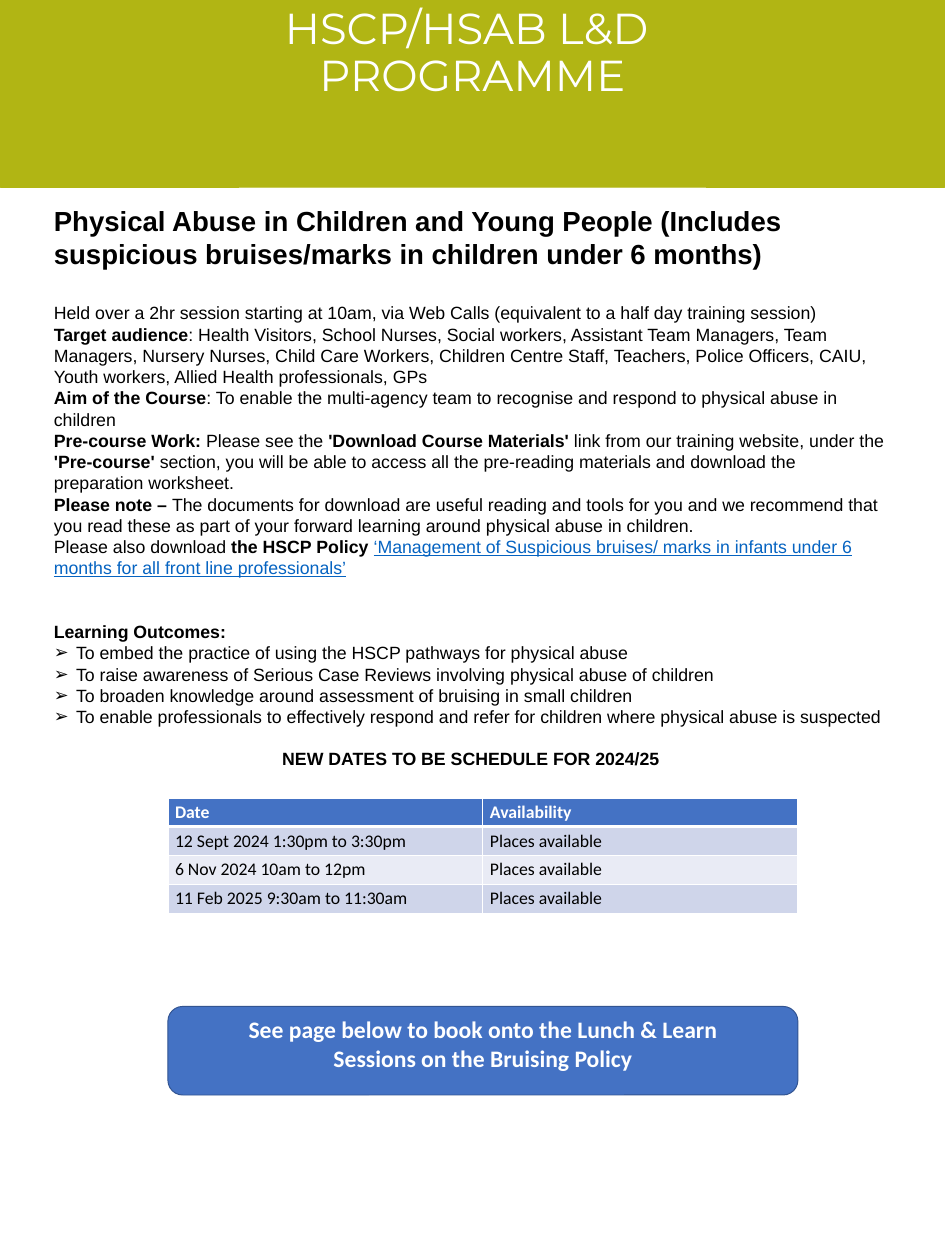
import pptx
import pptx.dml.color
import pptx.enum.shapes
import pptx.enum.text
import pptx.oxml
import pptx.oxml.ns
import pptx.util

Pt = pptx.util.Pt
ALIGN = pptx.enum.text.PP_ALIGN
ANCHOR = pptx.enum.text.MSO_ANCHOR
SHAPES = pptx.enum.shapes.MSO_SHAPE

PAGE_WIDTH, PAGE_HEIGHT = 960, 1280
PANEL_LEFT, PANEL_WIDTH = 170.6, 640
ROW_HEIGHT = 29.2
WHITE, BLACK, GREEN, BLUE, LINK = "FFFFFF", "000000", "B1B514", "4472C4", "0563C1"

HEADING = ("Physical Abuse in Children and Young People (Includes suspicious "
           "bruises/marks in children under 6 months)")
DETAILS = [
    [("Held over a 2hr session starting at 10am, via Web Calls (equivalent to a half day "
      "training session)", {})],
    [("Target audience", {"bold": True}),
     (": Health Visitors, School Nurses, Social workers, Assistant Team Managers, Team Managers, "
      "Nursery Nurses, Child Care Workers, Children Centre Staff, Teachers, Police Officers, CAIU, "
      "Youth workers, Allied Health professionals, GPs", {})],
    [("Aim of the Course", {"bold": True}),
     (": To enable the multi-agency team to recognise and respond to physical abuse in children", {})],
    [("Pre-course Work: ", {"bold": True}),
     ("Please see the ", {}),
     ("'Download Course Materials'", {"bold": True}),
     (" link from our training website, under the ", {}),
     ("'Pre-course'", {"bold": True}),
     (" section, you will be able to access all the pre-reading materials and download the "
      "preparation worksheet.", {})],
    [("Please note – ", {"bold": True}),
     ("The documents for download are useful reading and tools for you and we recommend that you "
      "read these as part of your forward learning around physical abuse in children.", {})],
    [("Please also download ", {}),
     ("the HSCP Policy ", {"bold": True}),
     ("‘Management of Suspicious bruises/ marks in infants under 6 months for all front line "
      "professionals’", {"color": LINK, "underline": True})],
]
OUTCOMES = [
    "To embed the practice of using the HSCP pathways for physical abuse",
    "To raise awareness of Serious Case Reviews involving physical abuse of children",
    "To broaden knowledge around assessment of bruising in small children",
    "To enable professionals to effectively respond and refer for children where physical abuse is suspected",
]
SESSIONS = [
    ("Date", "Availability"),
    ("12 Sept 2024 1:30pm to 3:30pm", "Places available"),
    ("6 Nov 2024 10am to 12pm", "Places available"),
    ("11 Feb 2025 9:30am to 11:30am", "Places available"),
]


def rgb(color):
    return pptx.dml.color.RGBColor.from_string(color)


def add_text(paragraph, text, size=18, font="Arial", color=BLACK, bold=False, underline=False):
    run = paragraph.add_run()
    run.text = text
    run.font.size = Pt(size)
    run.font.name = font
    run.font.color.rgb = rgb(color)
    run.font.bold = bold
    run.font.underline = underline


def next_paragraph(frame, align=ALIGN.LEFT, before=0, bullet=None):
    first = frame.paragraphs[0]
    paragraph = frame.add_paragraph() if first.runs else first
    paragraph.alignment = align
    paragraph.line_spacing = 1.0
    paragraph.space_before = Pt(before)
    paragraph.space_after = Pt(0)
    properties = paragraph._p.get_or_add_pPr()
    indent = Pt(22.5) if bullet else 0
    properties.set("marL", str(indent))
    properties.set("indent", str(-indent))
    mark = f'buChar char="{bullet}"' if bullet else "buNone"
    properties.append(pptx.oxml.parse_xml(f'<a:{mark} {pptx.oxml.ns.nsdecls("a")}/>'))
    return paragraph


def place(shape, left, top, width, height):
    shape.left, shape.top = Pt(left), Pt(top)
    shape.width, shape.height = Pt(width), Pt(height)


def add_panel(slide, kind, left, top, width, height, fill, line):
    shape = slide.shapes.add_shape(kind, Pt(left), Pt(top), Pt(width), Pt(height))
    shape.shadow.inherit = False
    shape.fill.solid()
    shape.fill.fore_color.rgb = rgb(fill)
    shape.line.color.rgb = rgb(line)
    shape.line.width = Pt(1)
    return shape


def add_banner(slide):
    band = add_panel(slide, SHAPES.RECTANGLE, 0, 0, PAGE_WIDTH, 190, GREEN, GREEN)
    slide.shapes._spTree.insert(2, band._element)
    title = slide.shapes.title
    place(title, 0, 3.6, PAGE_WIDTH, 162.7)
    frame = title.text_frame
    frame.auto_size = pptx.enum.text.MSO_AUTO_SIZE.NONE
    frame.vertical_anchor = ANCHOR.TOP
    paragraph = frame.paragraphs[0]
    paragraph.alignment = ALIGN.CENTER
    paragraph.line_spacing = 0.9
    add_text(paragraph, "HSCP/HSAB L&D ", size=44, font="Montserrat", color=WHITE)
    paragraph.add_line_break()
    add_text(paragraph, "PROGRAMME", size=44, font="Montserrat", color=WHITE)


def fill_body(body):
    place(body, 47.5, 203.8, 861.8, 605.5)
    frame = body.text_frame
    frame.word_wrap = True
    frame.auto_size = pptx.enum.text.MSO_AUTO_SIZE.NONE
    add_text(next_paragraph(frame), HEADING, size=28, bold=True)
    for index, runs in enumerate(DETAILS):
        paragraph = next_paragraph(frame, before=0 if index else 32.2)
        for text, style in runs:
            add_text(paragraph, text, **style)
    add_text(next_paragraph(frame, before=43), "Learning Outcomes:", bold=True)
    for outcome in OUTCOMES:
        add_text(next_paragraph(frame, bullet="➢"), outcome)
    dates = next_paragraph(frame, align=ALIGN.CENTER, before=21.5)
    add_text(dates, "NEW DATES TO BE SCHEDULE FOR 2024/25", bold=True)


def set_borders(cell, widths):
    properties = cell._tc.get_or_add_tcPr()
    for side, width in zip("LRTB", widths):
        properties.append(pptx.oxml.parse_xml(
            f'<a:ln{side} {pptx.oxml.ns.nsdecls("a")} w="{Pt(width)}"><a:solidFill>'
            f'<a:srgbClr val="{WHITE}"/></a:solidFill></a:ln{side}>'))


def add_sessions(slide):
    rows, columns = len(SESSIONS), len(SESSIONS[0])
    table = slide.shapes.add_table(rows, columns, Pt(PANEL_LEFT), Pt(810.7),
                                   Pt(PANEL_WIDTH), Pt(ROW_HEIGHT * rows)).table
    for row, values in enumerate(SESSIONS):
        table.rows[row].height = Pt(ROW_HEIGHT)
        header = row == 0
        fill = BLUE if header else ("E9EBF5", "CFD5EA")[row % 2]
        for column, value in enumerate(values):
            cell = table.cell(row, column)
            set_borders(cell, (1, 1, 3 if row == 1 else 1, 3 if header else 1))
            cell.fill.solid()
            cell.fill.fore_color.rgb = rgb(fill)
            add_text(cell.text_frame.paragraphs[0], value, font="Calibri",
                     color=WHITE if header else BLACK, bold=header)


def add_booking_note(slide):
    note = add_panel(slide, SHAPES.ROUNDED_RECTANGLE, PANEL_LEFT, 1022.4, PANEL_WIDTH, 90,
                     BLUE, "325491")
    frame = note.text_frame
    frame.word_wrap = True
    frame.vertical_anchor = ANCHOR.TOP
    frame.margin_top = Pt(4.7)
    for line in ("See page below to book onto the Lunch & Learn", "Sessions on the Bruising Policy"):
        add_text(next_paragraph(frame, align=ALIGN.CENTER), line, size=24, font="Calibri",
                 color=WHITE, bold=True)


def main():
    presentation = pptx.Presentation()
    presentation.slide_width, presentation.slide_height = Pt(PAGE_WIDTH), Pt(PAGE_HEIGHT)
    slide = presentation.slides.add_slide(presentation.slide_layouts[1])
    add_banner(slide)
    fill_body(slide.placeholders[1])
    add_sessions(slide)
    add_booking_note(slide)
    presentation.save("out.pptx")


if __name__ == "__main__":
    main()
